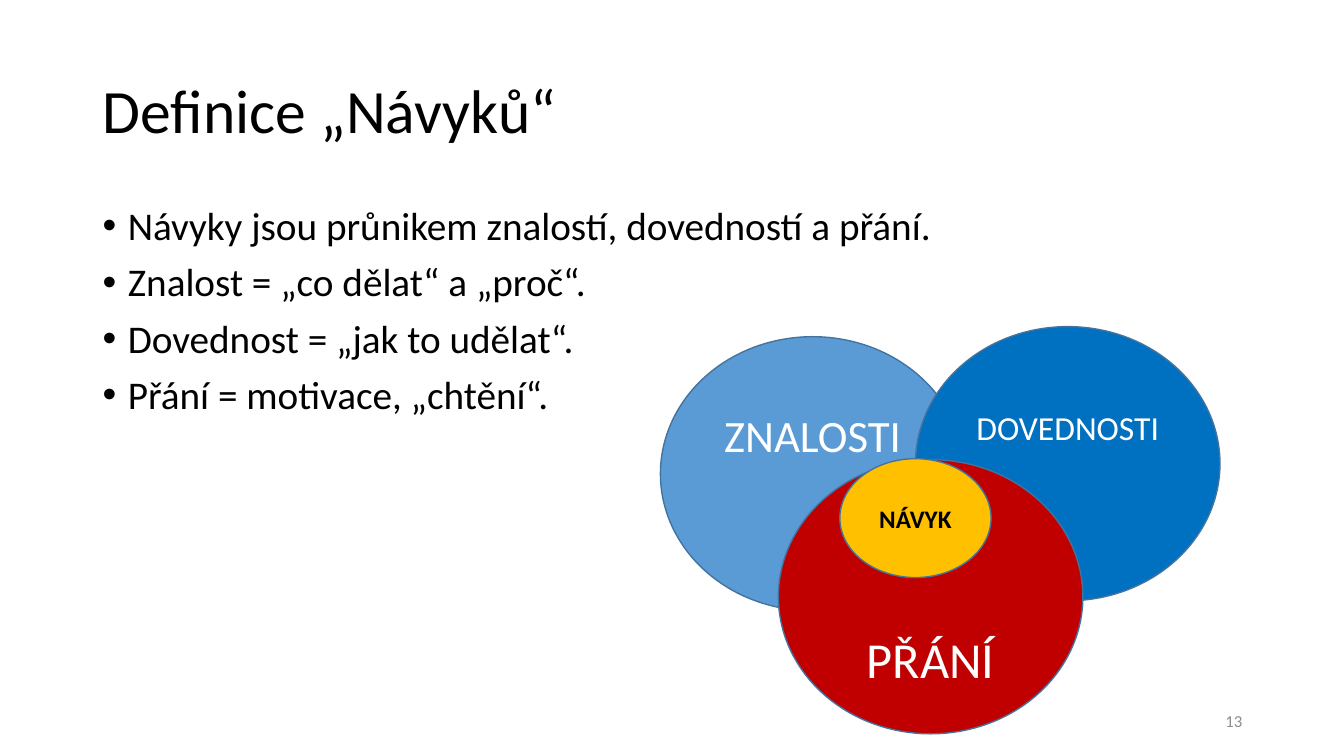
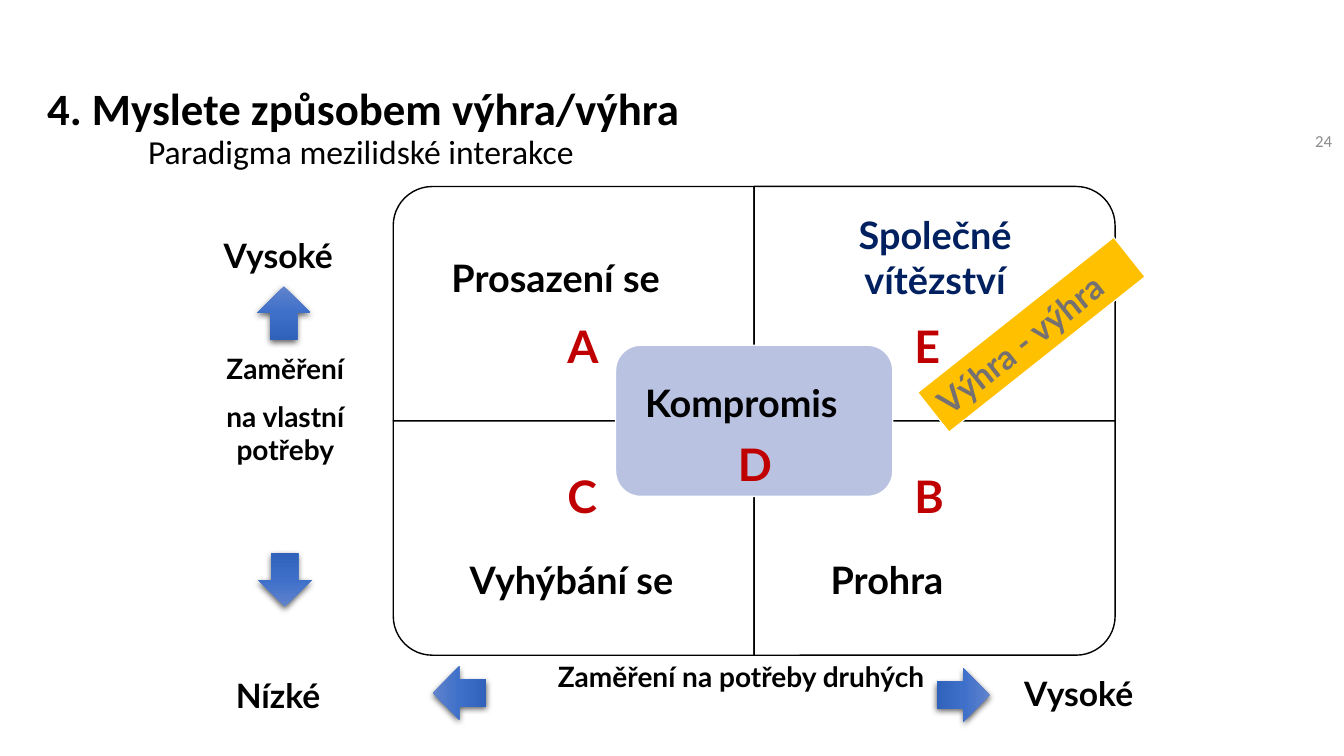
from lxml import etree
from pptx import Presentation
from pptx.dml.color import RGBColor
from pptx.enum.shapes import MSO_SHAPE
from pptx.enum.text import MSO_ANCHOR, PP_ALIGN
from pptx.oxml import parse_xml
from pptx.oxml.ns import qn
from pptx.util import Emu, Pt

PX = 9144  # 100 px to the inch
NS = 'xmlns:a="http://schemas.openxmlformats.org/drawingml/2006/main"'

LEFT, CENTER, RIGHT = PP_ALIGN.LEFT, PP_ALIGN.CENTER, PP_ALIGN.RIGHT
TOP, MIDDLE = MSO_ANCHOR.TOP, MSO_ANCHOR.MIDDLE
OVAL, RECT = MSO_SHAPE.OVAL, MSO_SHAPE.RECTANGLE
ROUNDED, ROUND_ONE = MSO_SHAPE.ROUNDED_RECTANGLE, MSO_SHAPE.ROUND_1_RECTANGLE
ARROW = MSO_SHAPE.UP_ARROW

BLACK, WHITE, GRAY, DARK_GRAY = "000000", "FFFFFF", "8C8C8C", "767171"
RED, AMBER, NAVY, OVAL_LINE = "C00000", "FFC000", "002060", "43739E"
SKY, BLUE, LAVENDER = "5B9BD5", "0070C0", "B9C2E1"
ARROW_STOPS = [(0, "6183CB"), (50, "3E70CA"), (100, "3062BB")]
HEAD_FONT, LABEL_FONT = "Calibri", "Lato"
ARROW_SIZE = 53


def px(n):
    return Emu(round(n * PX))


def rgb(color):
    return RGBColor.from_string(color)


def add_paragraph(tf, text, size, color=BLACK, font=HEAD_FONT, bold=False,
                  align=LEFT, spacing=None, before=0):
    """Fill the first paragraph if it is empty, otherwise append one."""
    p = tf.paragraphs[0]
    if p.runs:
        p = tf.add_paragraph()
    p.alignment = align
    p.space_before = Pt(before)
    if spacing:
        p.line_spacing = spacing
    r = p.add_run()
    r.text = text
    r.font.size, r.font.bold, r.font.name = Pt(size), bold, font
    r.font.color.rgb = rgb(color)
    return p


def indent(p, left, first=0):
    pPr = p._p.get_or_add_pPr()
    pPr.set("marL", str(px(left)))
    pPr.set("indent", str(px(first)))
    return pPr


def add_frame(slide, x, y, w, h, anchor=TOP):
    tf = slide.shapes.add_textbox(px(x), px(y), px(w), px(h)).text_frame
    tf.word_wrap = True
    tf.vertical_anchor = anchor
    return tf


def add_label(slide, x, y, w, h, lines, size, color=BLACK, align=LEFT, before=0):
    tf = add_frame(slide, x, y, w, h)
    for line in lines:
        add_paragraph(tf, line, size, color, LABEL_FONT, True, align, before=before)


def add_shape(slide, kind, x, y, w, h, fill, line, width=1, rotation=0):
    sp = slide.shapes.add_shape(kind, px(x), px(y), px(w), px(h))
    sp.shadow.inherit = False
    sp.fill.solid()
    sp.fill.fore_color.rgb = rgb(fill)
    sp.line.color.rgb = rgb(line)
    sp.line.width = Pt(width)
    sp.rotation = rotation
    return sp


def add_arrow(slide, x, y, rotation):
    """Arrow with a gradient and a soft shadow below it."""
    sp = add_shape(slide, ARROW, x, y, ARROW_SIZE, ARROW_SIZE, BLUE, BLUE,
                   rotation=rotation)
    sp.line.fill.background()
    spPr = sp._element.spPr
    stops = "".join(f'<a:gs pos="{pos * 1000}"><a:srgbClr val="{color}"/></a:gs>'
                    for pos, color in ARROW_STOPS)
    spPr.replace(spPr.find(qn("a:solidFill")), parse_xml(
        f'<a:gradFill {NS} rotWithShape="1"><a:gsLst>{stops}</a:gsLst>'
        '<a:lin ang="5400000" scaled="0"/></a:gradFill>'))
    spPr.find(qn("a:effectLst")).append(parse_xml(
        f'<a:outerShdw {NS} blurRad="57150" dist="19050" dir="5400000" '
        'algn="ctr" rotWithShape="0"><a:srgbClr val="000000">'
        '<a:alpha val="63000"/></a:srgbClr></a:outerShdw>'))


def add_title(slide, x, y, w, h, title, size, bold=False, subtitle=None):
    tf = add_frame(slide, x, y, w, h, MIDDLE)
    add_paragraph(tf, title, size, bold=bold, spacing=0.9)
    if subtitle:
        indent(add_paragraph(tf, subtitle, 24, spacing=0.9), 100)


def add_page_number(slide, x, y, w, h, number):
    tf = add_frame(slide, x, y, w, h, MIDDLE)
    add_paragraph(tf, number, 12, GRAY, align=RIGHT)


def add_bullets(slide, x, y, w, h, lines):
    tf = add_frame(slide, x, y, w, h)
    for line in lines:
        p = add_paragraph(tf, line, 28, spacing=0.9, before=10)
        pPr = indent(p, 25, -25)
        etree.SubElement(pPr, qn("a:buFont")).set("typeface", "Arial")
        etree.SubElement(pPr, qn("a:buChar")).set("char", "•")


def add_oval(slide, x, y, w, h, fill, text, size, color=WHITE, bold=False, shift=0):
    """Oval whose text sits shift px below its middle."""
    sp = add_shape(slide, OVAL, x, y, w, h, fill, OVAL_LINE)
    tf = sp.text_frame
    tf.word_wrap = True
    tf.vertical_anchor = MIDDLE
    tf.margin_top = px(5 + max(2 * shift, 0))
    tf.margin_bottom = px(5 + max(-2 * shift, 0))
    add_paragraph(tf, text, size, color, bold=bold, align=CENTER)


def add_venn(slide, x, y):
    for dx, dy, fill, text, size, shift in [
            (0, 10, SKY, "ZNALOSTI", 32, -39),
            (253, 0, BLUE, "DOVEDNOSTI", 24, -36),
            (117, 132, RED, "PŘÁNÍ", 36, 61)]:
        add_oval(slide, x + dx, y + dy, 302, 272, fill, text, size, shift=shift)
    add_oval(slide, x + 178, y + 131, 150, 118, AMBER, "NÁVYK", 18, BLACK, True)


def add_matrix(slide, x, y, w, h):
    """Four quadrants, each rounded at its outer corner, around a centre box."""
    cell_w, cell_h = w / 2, h / 2
    for col, row, rotation in [(0, 0, 270), (1, 0, 0), (0, 1, 180), (1, 1, 90)]:
        sw, sh = (cell_h, cell_w) if rotation % 180 else (cell_w, cell_h)
        add_shape(slide, ROUND_ONE, x + (col + 0.5) * cell_w - sw / 2,
                  y + (row + 0.5) * cell_h - sh / 2, sw, sh,
                  WHITE, BLACK, rotation=rotation)
    box_w, box_h = 275, 150
    add_shape(slide, ROUNDED, x + (w - box_w) / 2, y + (h - box_h) / 2,
              box_w, box_h, LAVENDER, WHITE)
    for letter, dx, dy in [("A", 163, 126), ("B", 507, 275), ("C", 163, 275),
                           ("D", 332, 243), ("E", 507, 126)]:
        add_label(slide, x + dx, y + dy, 61, 64, [letter], 32, RED)
    for name, dx, dy in [("Prosazení se", 48, 63), ("Vyhýbání se", 66, 362),
                         ("Prohra", 424, 362), ("Kompromis", 240, 187)]:
        add_label(slide, x + dx, y + dy, 260, 56, [name], 27)
    add_label(slide, x + 436, y + 20, 203, 101, ["Společné", "vítězství"],
              27, NAVY, CENTER)
    banner = add_shape(slide, RECT, x + 509, y + 122, 248, 50, AMBER, WHITE, 0.75, 321.6)
    tf = banner.text_frame
    tf.word_wrap = False
    tf.vertical_anchor = TOP
    add_paragraph(tf, "Výhra - výhra", 24, DARK_GRAY, LABEL_FONT, True)


def add_own_needs_axis(slide, x, y):
    add_label(slide, x + 44, y, 141, 50, ["Vysoké"], 24)
    add_arrow(slide, x + 87, y + 56, 0)
    add_label(slide, x, y + 116, 230, 128, ["Zaměření", "na vlastní potřeby"],
              20, align=CENTER, before=10)
    add_arrow(slide, x + 88, y + 321, 180)
    add_label(slide, x + 56, y + 437, 124, 50, ["Nízké"], 24)


def add_other_needs_axis(slide, x, y):
    add_arrow(slide, x, y + 12, 270)
    add_label(slide, x + 111, y, 390, 77, ["Zaměření na potřeby druhých"],
              20, align=CENTER)
    add_arrow(slide, x + 500, y + 14, 90)
    add_label(slide, x + 577, y + 14, 151, 50, ["Vysoké"], 24)


def build_habits(slide):
    add_title(slide, 92, 40, 1150, 145, "Definice „Návyků“", 44)
    add_bullets(slide, 92, 200, 1150, 476, [
        "Návyky jsou průnikem znalostí, dovedností a přání.",
        "Znalost = „co dělat“ a „proč“.",
        "Dovednost = „jak to udělat“.",
        "Přání = motivace, „chtění“."])
    add_page_number(slide, 942, 695, 300, 40, "13")
    add_venn(slide, 655, 324)


def build_win_win(slide):
    add_title(slide, 37, 75, 1013, 107, "4. Myslete způsobem výhra/výhra", 32, True,
              "Paradigma mezilidské interakce")
    add_page_number(slide, 1205, 80, 126, 119, "24")
    add_own_needs_axis(slide, 168, 228)
    add_other_needs_axis(slide, 429, 649)
    add_matrix(slide, 390, 185, 716, 465)


def main():
    prs = Presentation()
    prs.slide_width, prs.slide_height = px(1333), px(750)
    for build in (build_habits, build_win_win):
        build(prs.slides.add_slide(prs.slide_layouts[6]))
    prs.save("out.pptx")


if __name__ == "__main__":
    main()
